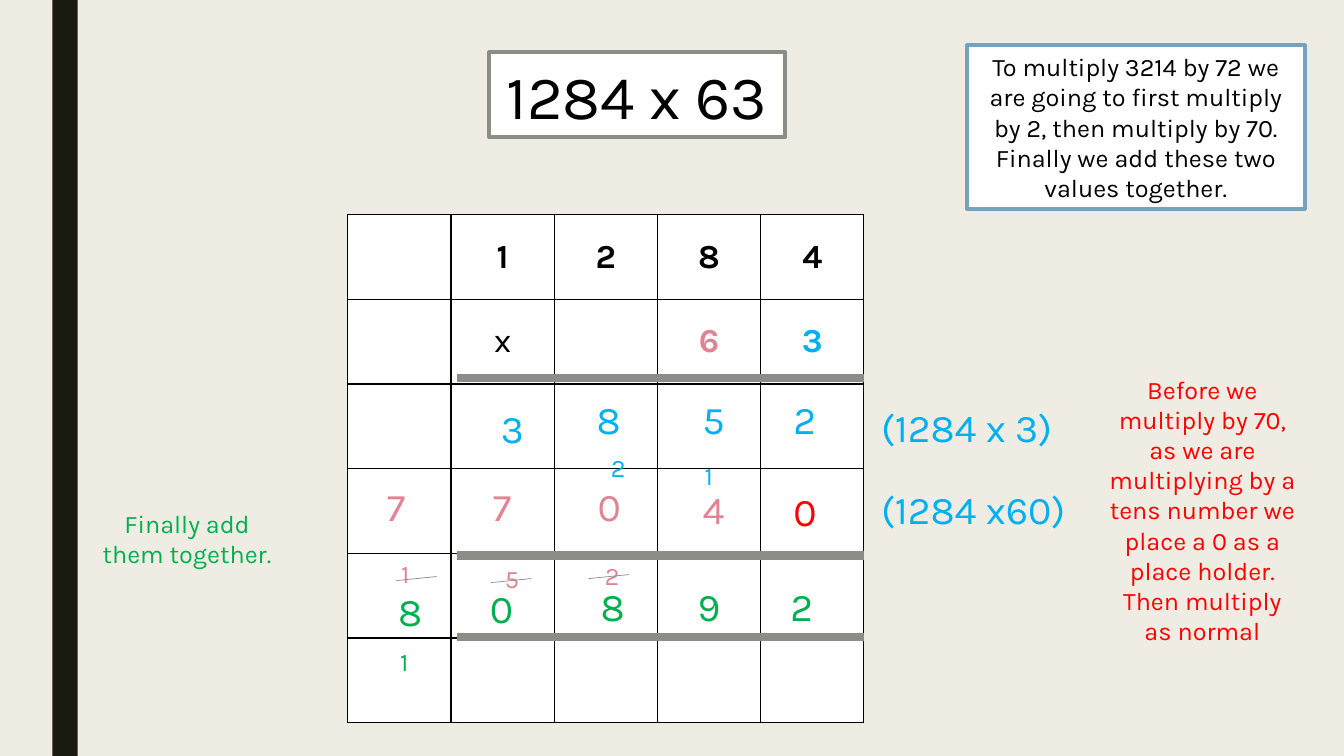
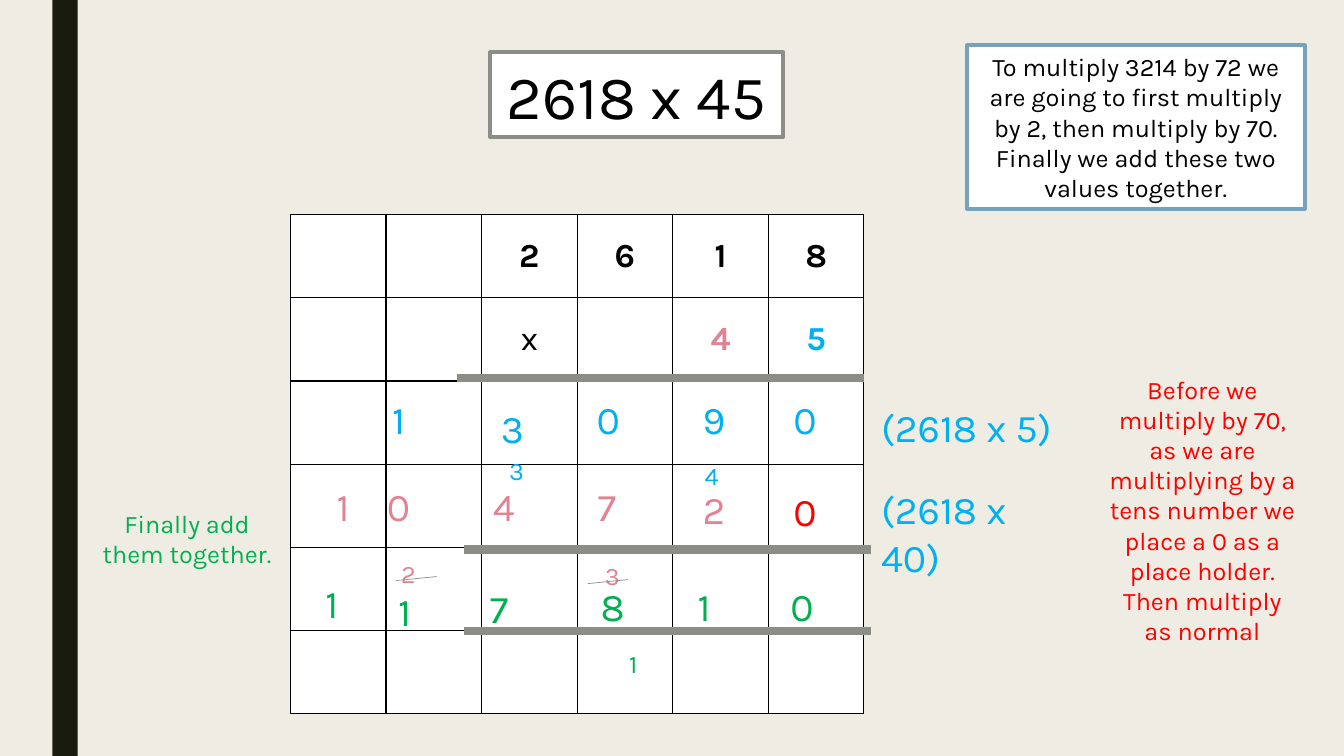
from dataclasses import dataclass

from lxml import etree
from pptx import Presentation
from pptx import util as u
from pptx.dml.color import RGBColor
from pptx.enum import shapes, text
from pptx.oxml import ns


@dataclass(frozen=True)
class Theme:
    font: str = "Karla"
    paper: str = "EFEDE3"
    band: str = "191B0E"
    white: str = "FFFFFF"
    ink: str = "000000"
    grey: str = "8C8D86"
    frame: str = "77A2BB"
    blue: str = "00B0F0"
    pink: str = "E28394"
    red: str = "FF0000"
    green: str = "00B050"
    title: int = 44
    digit: int = 28
    head: int = 24
    small: int = 18


T = Theme()
WIDE, HIGH = 13.33, 7.5
RIGHT, TOP = 8.57, 2.13  # right and top edges of the grid
RULE = 4.04              # length of a grey rule

# Content
GOAL = ("To multiply 3214 by 72 we are going to first multiply by 2, then "
        "multiply by 70. Finally we add these two values together.")
HOLDER = ("Before we multiply by 70, as we are multiplying by a tens number "
          "we place a 0 as a place holder.\nThen multiply as normal")
FINAL = "Finally add them together."

# Digit slots of each working line, units first: (left, top)
SLOTS = {
    "ones": [(7.77, 3.87), (6.87, 3.87), (5.82, 3.87), (4.87, 3.96),
             (3.79, 3.87)],
    "tens": [(7.77, 4.79), (6.87, 4.77), (5.83, 4.74), (4.79, 4.74),
             (3.74, 4.74), (3.24, 4.74)],
    "sum": [(7.74, 5.73), (6.82, 5.73), (5.86, 5.73), (4.76, 5.75),
            (3.85, 5.78), (3.13, 5.7)],
}
TINTS = {"ones": T.blue, "tens": T.pink, "sum": T.green}

SUMS = [
    dict(
        title="1284 x 63", box=(4.85, 2.94), cols=5, cell=(1.02, 0.84),
        top="1284", by="x 63",
        lines=dict(ones="3852", tens="77040", sum="80892"),
        labels=["(1284 x 3)", "(1284 x60)"],
        rules=[(4.53, 3.75), (4.53, 5.51), (4.53, 6.32)],
        carry=[("2", 5.96, 4.44, T.blue), ("1", 6.89, 4.52, T.blue),
               ("2", 5.9, 5.51, T.pink), ("5", 4.91, 5.54, T.pink),
               ("1", 3.88, 5.49, T.pink), ("1", 3.87, 6.36, T.green)],
        strikes=[(4.87, 5.78), (5.84, 5.74), (3.93, 5.76)],
    ),
    dict(
        title="2618 x 45", box=(4.86, 2.91), cols=6, cell=(0.95, 0.83),
        top="2618", by="x 45",
        lines=dict(ones="13090", tens="104720", sum="117810"),
        labels=["(2618 x 5)", "(2618 x 40)"],
        rules=[(4.53, 3.75), (4.6, 5.45), (4.6, 6.26)],
        carry=[("3", 4.95, 4.47, T.blue), ("4", 6.89, 4.52, T.blue),
               ("3", 5.9, 5.51, T.pink), ("2", 3.88, 5.49, T.pink),
               ("1", 6.14, 6.38, T.green)],
        strikes=[(5.83, 5.79), (3.93, 5.76)],
    ),
]


def rgb(tint):
    return RGBColor.from_string(tint)


def inch(*sizes):
    return [u.Inches(s) for s in sizes]


def write(frame, words, size=T.small, tint=T.ink, bold=False, mid=True):
    """Fill a text frame; each line of the words is a paragraph."""
    frame.text = words
    for para in frame.paragraphs:
        para.alignment = text.PP_ALIGN.CENTER if mid else text.PP_ALIGN.LEFT
        for run in para.runs:
            font = run.font
            font.name, font.size, font.bold = T.font, u.Pt(size), bold
            font.color.rgb = rgb(tint)


def label(slide, words, at, wrap=False, **style):
    frame = slide.shapes.add_textbox(*inch(*at)).text_frame
    write(frame, words, mid=wrap, **style)
    frame.word_wrap = wrap
    frame.auto_size = text.MSO_AUTO_SIZE.SHAPE_TO_FIT_TEXT


def paint(shape, fill, line=None):
    shape.fill.solid()
    shape.fill.fore_color.rgb = rgb(fill)
    if line:
        shape.line.color.rgb = rgb(line)
        shape.line.width = u.Pt(2.75)
    else:
        shape.line.fill.background()


def block(slide, at, fill, line=None):
    rect = slide.shapes.add_shape(shapes.MSO_SHAPE.RECTANGLE, *inch(*at))
    rect.shadow.inherit = False
    paint(rect, fill, line)
    return rect


def stroke(slide, start, end, width):
    line = slide.shapes.add_connector(
        shapes.MSO_CONNECTOR.STRAIGHT, *inch(*start, *end))
    line.line.color.rgb = rgb(T.grey)
    line.line.width = u.Pt(width)
    etree.SubElement(line.element.spPr, ns.qn("a:effectLst"))


def edge(cell):
    """Draw thin black borders; they must come before the fill."""
    props = cell._tc.get_or_add_tcPr()
    for spot, side in enumerate(("lnL", "lnR", "lnT", "lnB")):
        line = etree.Element(ns.qn("a:" + side), w=str(u.Pt(1)))
        fill = etree.SubElement(line, ns.qn("a:solidFill"))
        etree.SubElement(fill, ns.qn("a:srgbClr"), val=T.ink)
        props.insert(spot, line)


def grid(slide, job):
    cols, (wide, high) = job["cols"], job["cell"]
    rows = 6
    # Share the exact span so that the right edge stays put
    span = {5: 5.12, 6: 5.69}[cols]
    tall = {0.84: 5.04, 0.83: 4.95}[high]
    table = slide.shapes.add_table(
        rows, cols, *inch(RIGHT - span, TOP, span, tall)).table
    table.first_row = table.horz_banding = False
    heads = [job["top"].rjust(cols), job["by"].rjust(cols)]
    tints = {(1, cols - 2): T.pink, (1, cols - 1): T.blue}
    for r in range(rows):
        for c in range(cols):
            cell = table.cell(r, c)
            cell.fill.solid()
            cell.fill.fore_color.rgb = rgb(T.white)
            edge(cell)
            mark = heads[r][c].strip() if r < len(heads) else ""
            if mark:
                cell.vertical_anchor = text.MSO_ANCHOR.MIDDLE
                write(cell.text_frame, mark, size=T.head, bold=mark != "x",
                      tint=tints.get((r, c), T.ink))


def heading(slide, job):
    title = slide.shapes.title
    left, wide = job["box"]
    title.left, title.top, title.width, title.height = inch(
        left, 0.52, wide, 0.84)
    paint(title, T.white, T.grey)
    frame = title.text_frame
    write(frame, job["title"], size=T.title)
    frame.word_wrap = False
    frame.auto_size = text.MSO_AUTO_SIZE.NONE
    frame.vertical_anchor = text.MSO_ANCHOR.MIDDLE


def working(slide, job):
    # Rules, digits, carried digits and the strokes through them
    for x, y in job["rules"]:
        stroke(slide, (x, y), (x + RULE, y), 6)
    for name, digits in job["lines"].items():
        for n, (digit, at) in enumerate(zip(reversed(digits), SLOTS[name])):
            held = name == "tens" and n == 0
            label(slide, digit, (*at, 0.43, 0.57), size=T.digit,
                  tint=T.red if held else TINTS[name])
    for digit, x, y, tint in job["carry"]:
        label(slide, digit, (x, y, 0.35, 0.4), tint=tint)
    for x, y in job["strikes"]:
        stroke(slide, (x, y), (x + 0.4, y - 0.04), 0.5)


def notes(slide, job):
    goal = block(slide, (9.59, 0.45, 3.35, 1.62), T.white, T.frame)
    write(goal.text_frame, GOAL)
    goal.text_frame.word_wrap = True
    label(slide, HOLDER, (10.9, 3.66, 2.05, 2.83), wrap=True, tint=T.red)
    label(slide, FINAL, (0.83, 4.99, 2.05, 0.71), wrap=True, tint=T.green)
    for words, y in zip(job["labels"], (3.95, 4.77)):
        label(slide, words, (8.64, y, 2.1, 0.57), size=T.digit, tint=T.blue)


def main():
    deck = Presentation()
    deck.slide_width, deck.slide_height = inch(WIDE, HIGH)
    layout = deck.slide_layouts[5]
    back = deck.slide_master.background.fill
    back.solid()
    back.fore_color.rgb = rgb(T.paper)
    pages = [deck.slides.add_slide(layout) for _ in SUMS]

    # The dark band belongs to the layout, so all slides share it
    band = block(pages[0], (0.52, 0, 0.25, HIGH), T.band)
    layout.shapes.element.append(band.element)

    for slide, job in zip(pages, SUMS):
        heading(slide, job)
        grid(slide, job)
        notes(slide, job)
        working(slide, job)
    deck.save("out.pptx")


if __name__ == "__main__":
    main()
